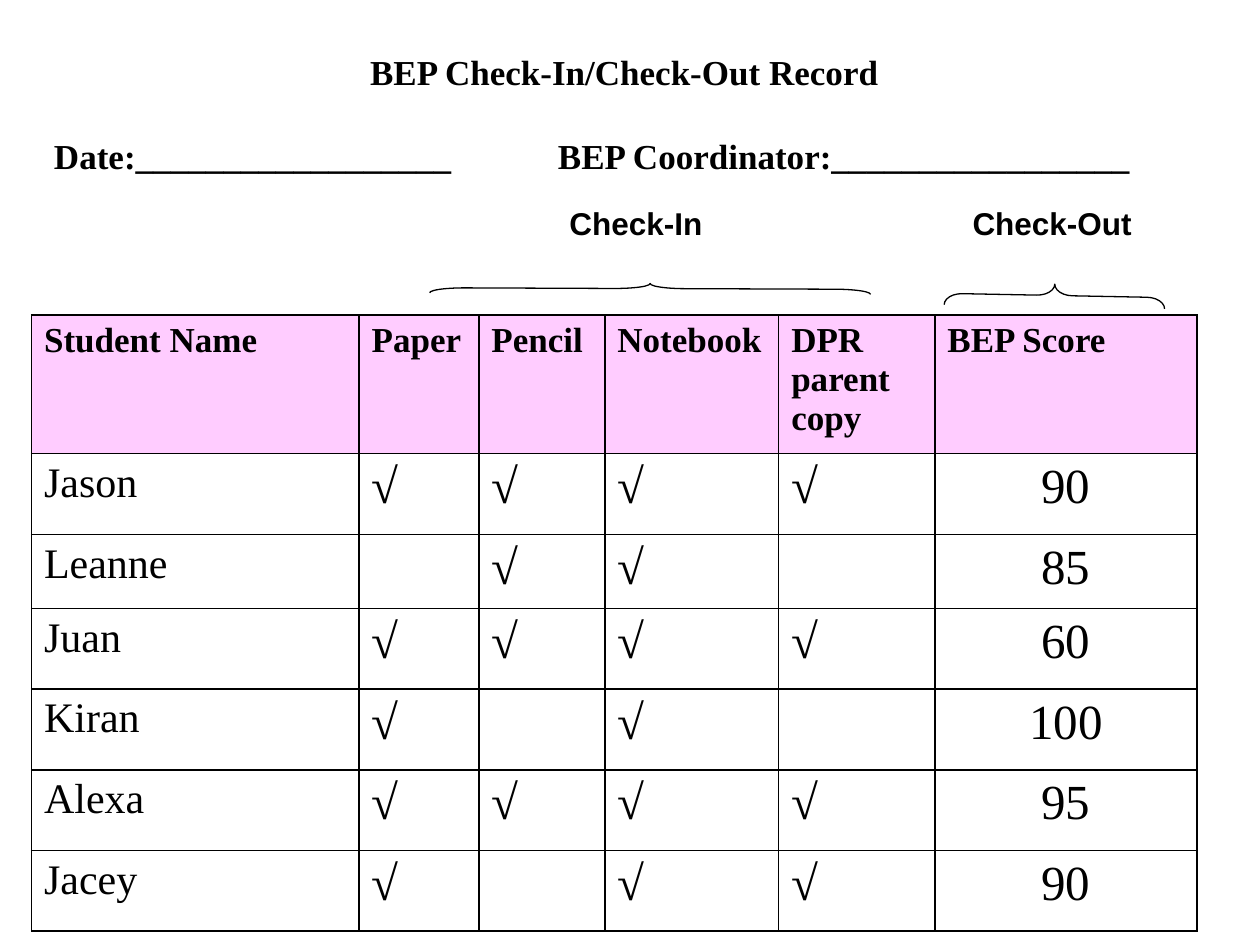
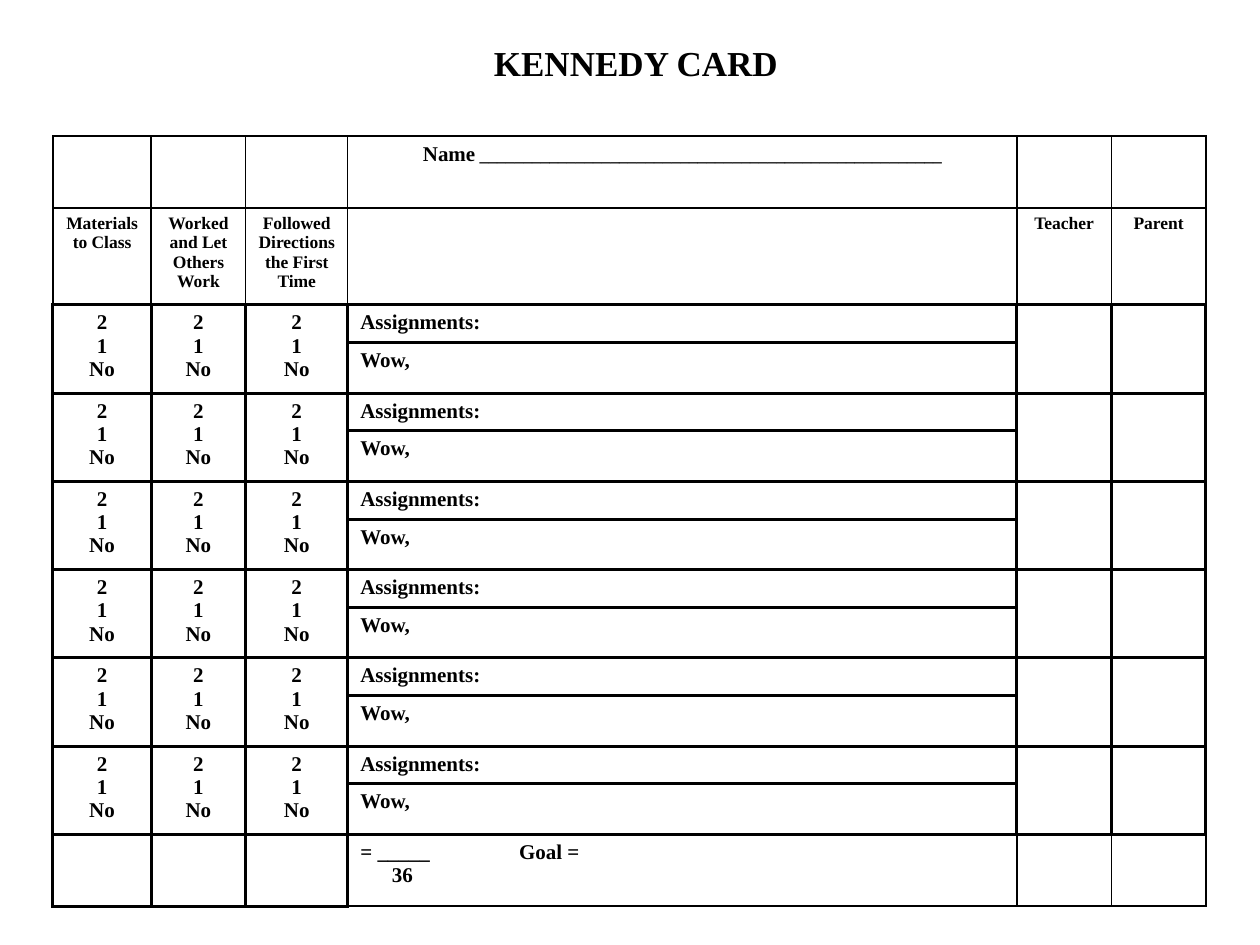
from lxml import etree
from pptx import Presentation
from pptx.dml.color import RGBColor
from pptx.enum import shapes, text
from pptx.oxml import ns
from pptx.util import Inches, Pt

BLACK = RGBColor(0, 0, 0)
PINK = RGBColor(0xFF, 0xCC, 0xFF)
SERIF, SANS = "Times New Roman", "Arial"
LEFT, MID = text.PP_ALIGN.LEFT, text.PP_ALIGN.CENTER

# Check-in record
TITLE = "BEP Check-In/Check-Out Record"
BLANKS = "Date:" + "_" * 18 + "\tBEP Coordinator:" + "_" * 17
GROUPS = "\tCheck-In\tCheck-Out"
HEADS = ["Student Name", "Paper", "Pencil", "Notebook", "DPR parent copy",
         "BEP Score"]
PUPILS = [  # name, paper, pencil, notebook, copy, score
    ("Jason", 1, 1, 1, 1, 90),
    ("Leanne", 0, 1, 1, 0, 85),
    ("Juan", 1, 1, 1, 1, 60),
    ("Kiran", 1, 0, 1, 0, 100),
    ("Alexa", 1, 1, 1, 1, 95),
    ("Jacey", 1, 0, 1, 1, 90),
]
BRACES = [  # left, top, width, height, turn, curl
    (5.12, 0.54, 0.08, 3.5, 270.2, 3.5),
    (8.28, 1.47, 0.18, 1.75, 271.1, 0.79),
]

# Daily card
CARD = "KENNEDY CARD"
GOALS = [["Materials", "to Class"], ["Worked and Let Others Work"],
         ["Followed Directions the First Time"], [], ["Teacher"], ["Parent"]]
MARKS = ["2", "1", "No"]
PERIODS = 6


def write(par, words, size, bold=True, font=SERIF, align=LEFT):
    par.alignment = align
    run = par.add_run()
    run.text = words
    run.font.name, run.font.size, run.font.bold = font, Pt(size), bold
    run.font.color.rgb = BLACK


def fill(cell, lines, size, bold=True, align=LEFT):
    """Write each line as a paragraph of the cell."""
    for i, line in enumerate(lines):
        frame = cell.text_frame
        par = frame.add_paragraph() if i else frame.paragraphs[0]
        write(par, line, size, bold, align=align)


def set_tabs(par, *stops):
    props = par._p.get_or_add_pPr()
    tabs = etree.SubElement(props, ns.qn("a:tabLst"))
    for stop in stops:
        etree.SubElement(tabs, ns.qn("a:tab"), pos=str(Inches(stop)), algn="l")


def edge(cell, left, top, right, base):
    """Draw the four borders, with widths in points."""
    props = cell._tc.get_or_add_tcPr()
    for side, width in zip("LTRB", (left, top, right, base)):
        line = etree.SubElement(props, ns.qn("a:ln" + side), w=str(Pt(width)))
        solid = etree.SubElement(line, ns.qn("a:solidFill"))
        etree.SubElement(solid, ns.qn("a:srgbClr"), val=str(BLACK))


def add_grid(slide, left, top, cols, rows):
    """Add a plain table with the given column widths and row heights."""
    grid = slide.shapes.add_table(
        len(rows), len(cols), Inches(left), Inches(top),
        Inches(sum(cols)), Inches(sum(rows))).table
    grid.first_row = grid.horz_banding = False
    for col, width in zip(grid.columns, cols):
        col.width = Inches(width)
    for row, height in zip(grid.rows, rows):
        row.height = Inches(height)
    return grid


def add_box(slide, left, top, width, height):
    box = slide.shapes.add_textbox(*map(Inches, (left, top, width, height)))
    box.text_frame.word_wrap = True
    return box.text_frame


def add_brace(slide, left, top, width, height, turn, curl):
    brace = slide.shapes.add_shape(
        shapes.MSO_SHAPE.RIGHT_BRACE,
        *map(Inches, (left, top, width, height)))
    brace.rotation = turn
    brace.adjustments[0], brace.adjustments[1] = curl, 0.5
    brace.shadow.inherit = False
    brace.fill.background()
    brace.line.color.rgb, brace.line.width = BLACK, Pt(0.75)


def build_record(slide):
    for brace in BRACES:
        add_brace(slide, *brace)

    frame = add_box(slide, 0.33, 0.36, 9.25, 1.6)
    frame.vertical_anchor = text.MSO_ANCHOR.MIDDLE
    write(frame.paragraphs[0], TITLE, 20, align=MID)
    blanks, groups = frame.add_paragraph(), frame.add_paragraph()
    blanks.space_before, groups.space_before = Pt(24), Pt(16)
    write(blanks, BLANKS, 20)
    set_tabs(blanks, 4)
    write(groups, GROUPS, 18, font=SANS)
    set_tabs(groups, 4.09, 7.29)

    rows = [1.1] + [0.64] * len(PUPILS)
    rows[2] = 0.59
    grid = add_grid(slide, 0.25, 2.5, [2.6, 0.95, 1, 1.38, 1.24, 2.08], rows)
    for cell in grid.iter_cells():
        edge(cell, 1, 1, 1, 1)
        cell.fill.background()
    for c, head in enumerate(HEADS):
        cell = grid.cell(0, c)
        cell.fill.solid()
        cell.fill.fore_color.rgb = PINK
        fill(cell, [head], 20)
    for r, (name, *ticks, score) in enumerate(PUPILS, 1):
        fill(grid.cell(r, 0), [name], 24, False)
        for c, tick in enumerate(ticks, 1):
            if tick:
                fill(grid.cell(r, c), ["√"], 28, False)
        fill(grid.cell(r, 5), [str(score)], 28, False, MID)


def build_card(slide):
    frame = add_box(slide, 3.92, 0.33, 2.27, 0.73)
    frame.margin_left = frame.margin_right = 0
    frame.margin_top = frame.margin_bottom = 0
    frame.word_wrap = False
    write(frame.paragraphs[0], CARD, 20)

    rows = [0.57, 0.77] + [0.3, 0.4] * PERIODS + [0.57]
    last = len(rows) - 1
    grid = add_grid(slide, 0.42, 1.08,
                    [0.78, 0.75, 0.81, 5.31, 0.75, 0.75], rows)
    for r in range(len(rows)):
        for c in range(6):
            widths = (2, 2, 2, 2)
            if r == 0:
                widths = (1, 1, 1, 1)
            elif r == 1:
                widths = (1, 1, 1, 2)
            elif r == last and c > 2:
                widths = (2 if c == 3 else 1, 2, 1, 1)
            edge(grid.cell(r, c), *widths)
            grid.cell(r, c).fill.background()

    name = grid.cell(0, 3).text_frame.paragraphs[0]
    write(name, "Name", 12, align=MID)
    write(name, " " + "_" * 53, 10, align=MID)
    for c, goal in enumerate(GOALS):
        fill(grid.cell(1, c), goal, 10, align=MID)

    for r in range(2, last, 2):
        for c in (0, 1, 2, 4, 5):
            grid.cell(r, c).merge(grid.cell(r + 1, c))
            if c < 3:
                fill(grid.cell(r, c), MARKS, 12, align=MID)
        fill(grid.cell(r, 3), ["Assignments:"], 12)
        fill(grid.cell(r + 1, 3), ["Wow,"], 12)

    total = grid.cell(last, 3)
    fill(total, ["= _____\tGoal =", "36"], 12)
    score, most = total.text_frame.paragraphs
    set_tabs(score, 1.26)
    most._p.get_or_add_pPr().set("marL", str(Inches(0.25)))


def main():
    deck = Presentation()
    deck.slide_width, deck.slide_height = Inches(10), Inches(7.5)
    for build in (build_record, build_card):
        build(deck.slides.add_slide(deck.slide_layouts[6]))
    deck.save("out.pptx")


if __name__ == "__main__":
    main()
